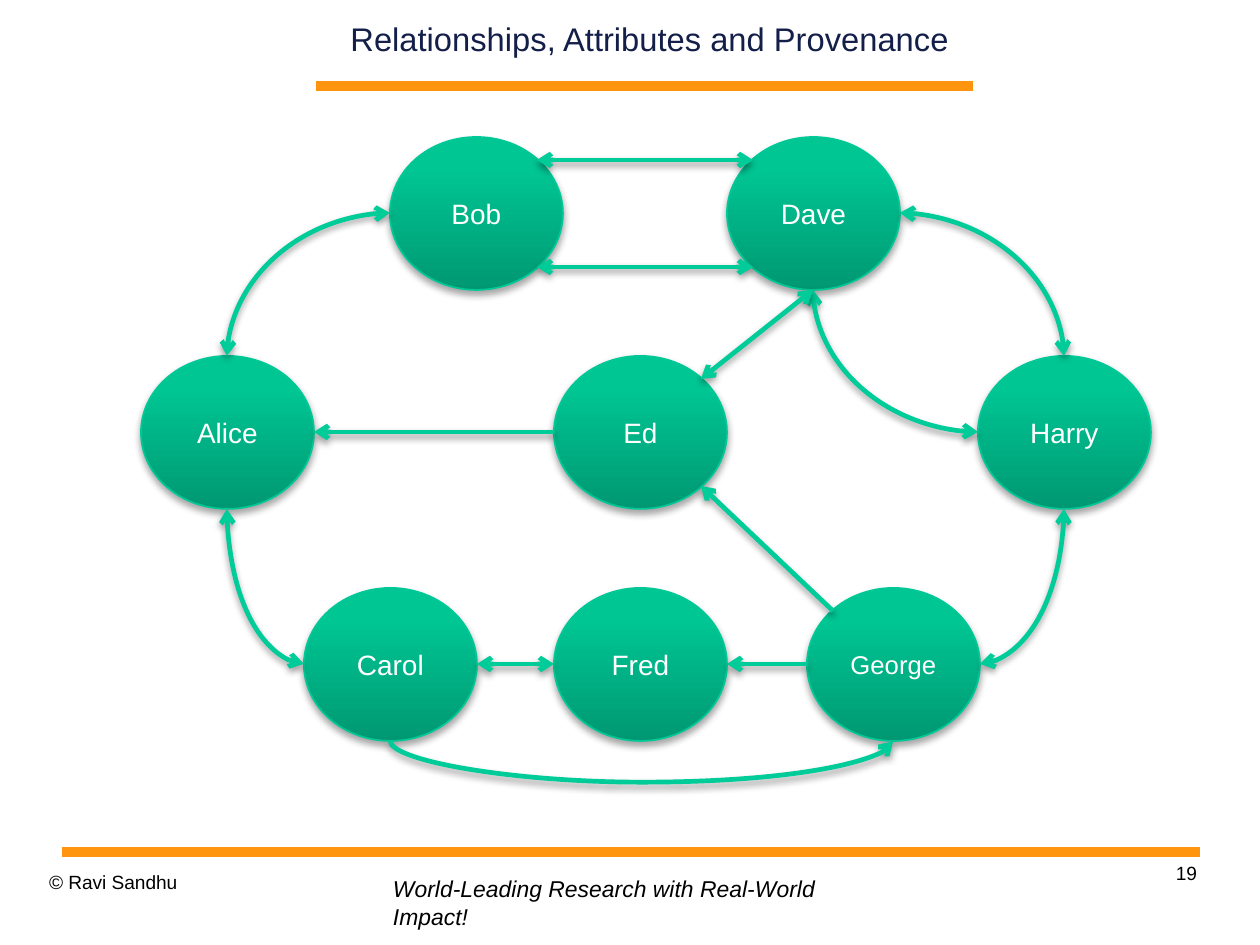
from enum import Enum
from typing import NamedTuple

from lxml.etree import SubElement
from pptx import Presentation
from pptx.dml.color import RGBColor
from pptx.enum.shapes import MSO_CONNECTOR, MSO_SHAPE
from pptx.enum.text import MSO_ANCHOR, MSO_AUTO_SIZE, PP_ALIGN
from pptx.oxml.ns import qn
from pptx.util import Emu, Pt

PX_PER_INCH = 168
NODE_WIDTH, NODE_HEIGHT = 173, 153
ARC_DEPTH = 42

WHITE = RGBColor(0xFF, 0xFF, 0xFF)
BLACK = RGBColor(0x00, 0x00, 0x00)
NAVY = RGBColor(0x13, 0x1F, 0x49)
ORANGE = RGBColor(0xFF, 0x95, 0x0E)
RIM_GREEN = RGBColor(0x00, 0xC8, 0x96)
LINK_GREEN = RGBColor(0x00, 0xCC, 0x99)
NODE_GRADIENT = (
    (0, RGBColor(0x00, 0x98, 0x72)),
    (80, RGBColor(0x00, 0xC6, 0x94)),
    (100, RGBColor(0x00, 0xC7, 0x95)),
)


class Site(Enum):
    TOP = (0, 0.5, 0)
    TOP_LEFT = (1, 0.15, 0.15)
    LEFT = (2, 0, 0.5)
    BOTTOM_LEFT = (3, 0.15, 0.85)
    BOTTOM = (4, 0.5, 1)
    BOTTOM_RIGHT = (5, 0.85, 0.85)
    RIGHT = (6, 1, 0.5)
    TOP_RIGHT = (7, 0.85, 0.15)


class Person(NamedTuple):
    name: str
    left: int
    top: int
    size: int = 12

    def point(self, site: Site) -> tuple[int, int]:
        _, across, down = site.value
        return self.left + round(NODE_WIDTH * across), self.top + round(NODE_HEIGHT * down)


class Relation(NamedTuple):
    source: Person
    leaving: Site
    target: Person
    entering: Site
    mutual: bool = True
    preset: str = "line"


class Rule(NamedTuple):
    left: int
    right: int
    y: int


class Caption(NamedTuple):
    text: str
    left: int
    top: int
    width: int
    height: int
    style: dict


BOB = Person("Bob", 390, 137)
DAVE = Person("Dave", 727, 137)
ALICE = Person("Alice", 141, 356)
ED = Person("Ed", 554, 356)
HARRY = Person("Harry", 978, 356)
CAROL = Person("Carol", 304, 588)
FRED = Person("Fred", 554, 588)
GEORGE = Person("George", 807, 588, 11)
PEOPLE = (GEORGE, FRED, CAROL, HARRY, ED, ALICE, DAVE, BOB)

QUARTER, ARC = "curvedConnector2", "curvedConnector3"
RELATIONS = (
    Relation(BOB, Site.LEFT, ALICE, Site.TOP, preset=QUARTER),
    Relation(DAVE, Site.RIGHT, HARRY, Site.TOP, preset=QUARTER),
    Relation(CAROL, Site.LEFT, ALICE, Site.BOTTOM, preset=QUARTER),
    Relation(GEORGE, Site.RIGHT, HARRY, Site.BOTTOM, preset=QUARTER),
    Relation(HARRY, Site.LEFT, DAVE, Site.BOTTOM, preset=QUARTER),
    Relation(BOB, Site.TOP_RIGHT, DAVE, Site.TOP_LEFT),
    Relation(BOB, Site.BOTTOM_RIGHT, DAVE, Site.BOTTOM_LEFT),
    Relation(ED, Site.LEFT, ALICE, Site.RIGHT, mutual=False),
    Relation(CAROL, Site.RIGHT, FRED, Site.LEFT),
    Relation(ED, Site.TOP_RIGHT, DAVE, Site.BOTTOM),
    Relation(GEORGE, Site.TOP_LEFT, ED, Site.BOTTOM_RIGHT, mutual=False),
    Relation(GEORGE, Site.LEFT, FRED, Site.RIGHT, mutual=False),
    Relation(CAROL, Site.BOTTOM, GEORGE, Site.BOTTOM, mutual=False, preset=ARC),
)

RULES = (Rule(316, 973, 86), Rule(62, 1200, 852))
CAPTIONS = (
    Caption("19", 903, 861, 294, 66, dict(size=8.2, align=PP_ALIGN.RIGHT)),
    Caption("© Ravi Sandhu", 49, 870, 294, 49, dict(size=8.2)),
    Caption("World-Leading Research with Real-World Impact!", 383, 870, 522, 39,
            dict(size=9.8, italic=True, inset=(10, 5), wrap=False,
                 fit=MSO_AUTO_SIZE.SHAPE_TO_FIT_TEXT)),
    Caption("Relationships, Attributes and Provenance", 325, 6, 650, 64,
            dict(size=14, color=NAVY, align=PP_ALIGN.CENTER, anchor=MSO_ANCHOR.MIDDLE)),
)


def px(length: float) -> Emu:
    return Emu(round(length * 914400 / PX_PER_INCH))


def write(shape, text: str, *, size: float, color: RGBColor = BLACK, italic: bool = False,
          align=PP_ALIGN.LEFT, anchor=MSO_ANCHOR.TOP, inset=(0, 0), wrap: bool = True,
          fit=MSO_AUTO_SIZE.NONE) -> None:
    frame = shape.text_frame
    frame.word_wrap = wrap
    frame.auto_size = fit
    frame.vertical_anchor = anchor
    frame.margin_left = frame.margin_right = px(inset[0])
    frame.margin_top = frame.margin_bottom = px(inset[1])
    paragraph = frame.paragraphs[0]
    paragraph.alignment = align
    run = paragraph.add_run()
    run.text = text
    run.font.name = "Arial"
    run.font.size = Pt(size)
    run.font.italic = italic
    run.font.color.rgb = color


def add_shadow(properties, alpha: int, distance: float) -> None:
    effects = SubElement(properties, qn("a:effectLst"))
    shadow = SubElement(effects, qn("a:outerShdw"), blurRad=str(Pt(3.1)), dist=str(Pt(distance)),
                        dir="5400000", rotWithShape="0")
    black = SubElement(shadow, qn("a:srgbClr"), val=str(BLACK))
    SubElement(black, qn("a:alpha"), val=str(alpha * 1000))


def draw_rule(slide, rule: Rule) -> None:
    line = slide.shapes.add_connector(MSO_CONNECTOR.STRAIGHT, px(rule.left), px(rule.y),
                                      px(rule.right), px(rule.y))
    line.line.color.rgb = ORANGE
    line.line.width = Pt(4.31)
    SubElement(line.element.spPr, qn("a:effectLst"))


def draw_person(slide, person: Person) -> int:
    oval = slide.shapes.add_shape(MSO_SHAPE.OVAL, px(person.left), px(person.top),
                                  px(NODE_WIDTH), px(NODE_HEIGHT))
    oval.fill.gradient()
    oval.fill.gradient_angle = 90
    stops = oval.element.spPr.find(".//" + qn("a:gsLst"))
    stops.clear()
    for position, color in NODE_GRADIENT:
        stop = SubElement(stops, qn("a:gs"), pos=str(position * 1000))
        SubElement(stop, qn("a:srgbClr"), val=str(color))
    oval.line.color.rgb = RIM_GREEN
    oval.line.width = Pt(0.75)
    add_shadow(oval.element.spPr, 35, 1.8)
    write(oval, person.name, size=person.size, color=WHITE, align=PP_ALIGN.CENTER,
          anchor=MSO_ANCHOR.MIDDLE)
    return oval.shape_id


def bend_below(link, start: tuple[int, int], end: tuple[int, int]) -> None:
    span = end[0] - start[0]
    link.left, link.top = px((start[0] + end[0] - 1) / 2), px(start[1] - span / 2)
    link.width, link.height = px(1), px(span)
    frame = link.element.spPr.find(qn("a:xfrm"))
    frame.set("rot", "16200000")
    frame.set("flipH", "1")
    adjustments = link.element.spPr.find(".//" + qn("a:avLst"))
    SubElement(adjustments, qn("a:gd"), name="adj1", fmla=f"val {ARC_DEPTH * 100000}")


def draw_relation(slide, relation: Relation, ids: dict[str, int]) -> None:
    start = relation.source.point(relation.leaving)
    end = relation.target.point(relation.entering)
    link = slide.shapes.add_connector(MSO_CONNECTOR.STRAIGHT, *map(px, start + end))
    properties = link.element.spPr
    properties.find(qn("a:prstGeom")).set("prst", relation.preset)
    if relation.preset == ARC:
        bend_below(link, start, end)
    glue = link.element.find(".//" + qn("p:cNvCxnSpPr"))
    for tag, person, site in (("a:stCxn", relation.source, relation.leaving),
                              ("a:endCxn", relation.target, relation.entering)):
        SubElement(glue, qn(tag), id=str(ids[person.name]), idx=str(site.value[0]))
    link.line.color.rgb = LINK_GREEN
    link.line.width = Pt(2)
    stroke = properties.find(qn("a:ln"))
    for tag in ("a:headEnd", "a:tailEnd") if relation.mutual else ("a:tailEnd",):
        SubElement(stroke, qn(tag), type="arrow")
    add_shadow(properties, 38, 1.6)


def main() -> None:
    deck = Presentation()
    deck.slide_width, deck.slide_height = px(1260), px(945)
    slide = deck.slides.add_slide(deck.slide_layouts[6])
    for rule in RULES:
        draw_rule(slide, rule)
    for text, left, top, width, height, style in CAPTIONS:
        write(slide.shapes.add_textbox(px(left), px(top), px(width), px(height)), text, **style)
    ids = {person.name: draw_person(slide, person) for person in PEOPLE}
    for relation in RELATIONS:
        draw_relation(slide, relation, ids)
    deck.save("out.pptx")


if __name__ == "__main__":
    main()
